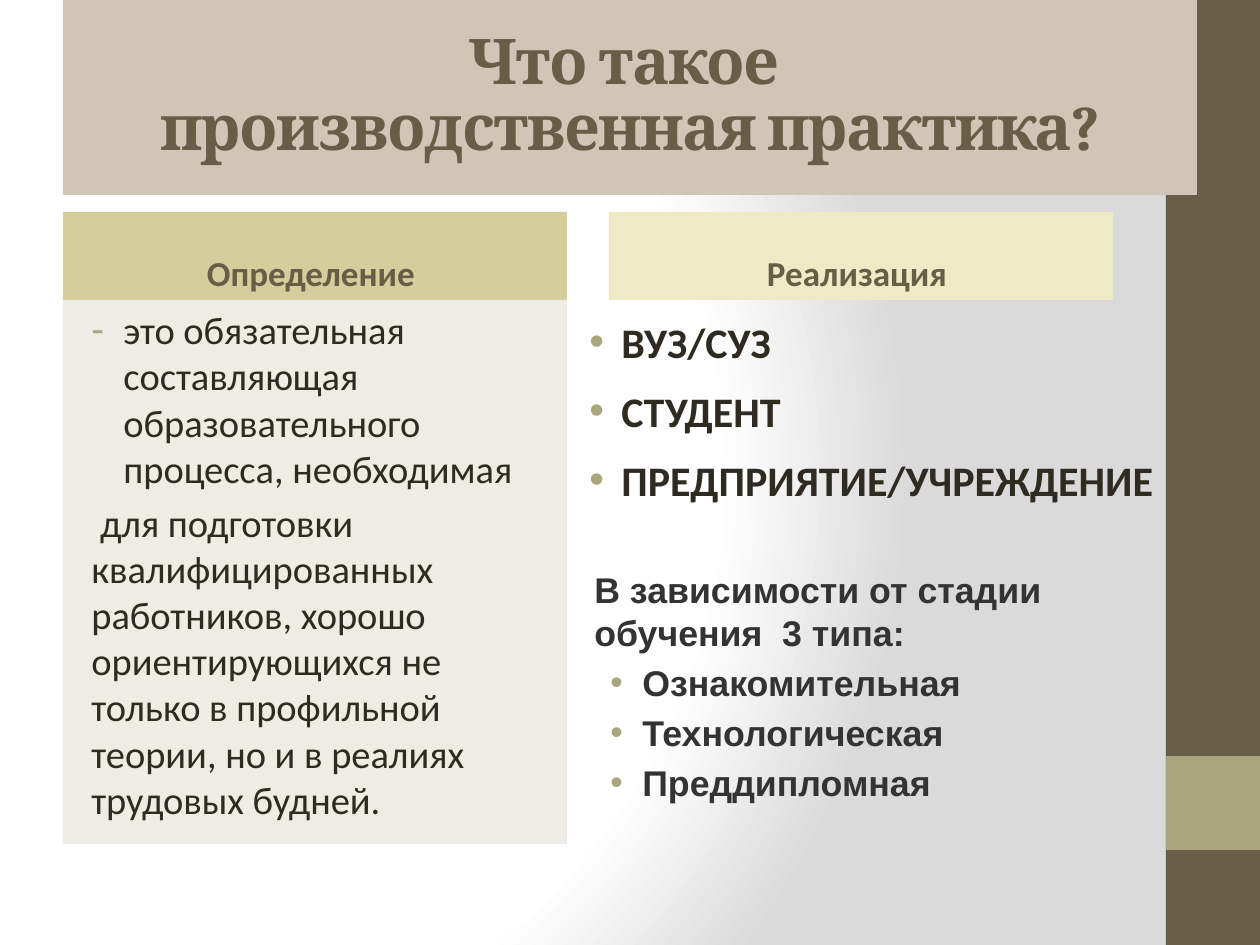
from pptx import Presentation
from pptx.dml.color import RGBColor
from pptx.enum.shapes import MSO_SHAPE as SHAPE
from pptx.enum.text import MSO_ANCHOR as ANCHOR, PP_ALIGN as ALIGN
from pptx.oxml import parse_xml
from pptx.oxml.ns import nsdecls
from pptx.util import Emu, Pt

PX = 914400 // 126
BROWN, OLIVE, INK, GREY = "675E47", "A9A57C", "2F2B20", "333333"
INDENT, HANGING = 48, 32

BACKGROUND_STOPS = [(0, "FFFFFF"), (75, "FFFFFF"), (100, "DADADA")]
SIDEBAR = [((1166, 0, 94, 945), BROWN), ((1166, 756, 94, 94), OLIVE)]

TITLE = dict(font="Cambria", size=36, color=BROWN, bold=True,
             align=ALIGN.CENTER, line=0.87, before=0, tracking=-100)
HEADING = dict(font="Calibri", size=20, color=BROWN, bold=True, align=ALIGN.CENTER)
DEFINITION = dict(font="Calibri", size=22, color=INK)
PARTIES = dict(font="Calibri", size=24, color=INK, bold=True, line=1.2)
TYPES = dict(font="Arial", size=20.4, color=GREY, bold=True)

PANELS = [
    ((63, 0, 1134, 195), "D0C6B8", ANCHOR.MIDDLE, TITLE, [
        ("", 0, "Что такое "),
        ("", 0, "производственная практика?"),
    ]),
    ((63, 212, 504, 88), "D3CE9B", ANCHOR.BOTTOM, HEADING, [("", 0, "Определение ")]),
    ((63, 300, 504, 544), "EEEDE5", ANCHOR.TOP, DEFINITION, [
        ("-", INDENT, "это обязательная составляющая образовательного процесса, необходимая"),
        ("", 16, " для подготовки квалифицированных работников, хорошо ориентирующихся "
                 "не только в профильной теории, но и в реалиях трудовых будней."),
    ]),
    ((609, 212, 504, 88), "EDEAC4", ANCHOR.BOTTOM, HEADING, [("", 0, "Реализация ")]),
    ((561, 300, 605, 223), None, ANCHOR.TOP, PARTIES, [
        ("•", INDENT, "ВУЗ/СУЗ"),
        ("•", INDENT, "СТУДЕНТ"),
        ("•", INDENT, "ПРЕДПРИЯТИЕ/УЧРЕЖДЕНИЕ"),
    ]),
    ((582, 562, 605, 223), None, ANCHOR.TOP, TYPES, [
        ("", 0, "В зависимости от стадии обучения  3 типа:"),
        ("•", INDENT, "Ознакомительная"),
        ("•", INDENT, "Технологическая"),
        ("•", INDENT, "Преддипломная"),
    ]),
]


def rgb(color):
    return RGBColor.from_string(color)


def px(length):
    return Emu(length * PX)


def paint_background(slide):
    stops = "".join(f'<a:gs pos="{pos * 1000}"><a:srgbClr val="{color}"/></a:gs>'
                    for pos, color in BACKGROUND_STOPS)
    slide.element.cSld.insert(0, parse_xml(
        f'<p:bg {nsdecls("p", "a")}><p:bgPr><a:gradFill rotWithShape="1">'
        f'<a:gsLst>{stops}</a:gsLst><a:path path="circle">'
        '<a:fillToRect l="20000" t="50000" r="100000" b="50000"/></a:path>'
        '</a:gradFill><a:effectLst/></p:bgPr></p:bg>'))


def add_panel(slide, box, fill):
    place = [px(length) for length in box]
    if fill is None:
        return slide.shapes.add_textbox(*place)
    panel = slide.shapes.add_shape(SHAPE.RECTANGLE, *place)
    panel.shadow.inherit = False
    panel.fill.solid()
    panel.fill.fore_color.rgb = rgb(fill)
    panel.line.fill.background()
    return panel


def set_bullet(paragraph, bullet, margin):
    props = paragraph._p.get_or_add_pPr()
    props.set("marL", str(px(margin)))
    props.set("indent", str(px(-HANGING if bullet else 0)))
    if bullet:
        props.append(parse_xml(f'<a:buClr {nsdecls("a")}><a:srgbClr val="{OLIVE}"/></a:buClr>'))
        props.append(parse_xml(f'<a:buFont {nsdecls("a")} typeface="Arial"/>'))
        props.append(parse_xml(f'<a:buChar {nsdecls("a")} char="{bullet}"/>'))


def write(panel, anchor, style, lines):
    frame = panel.text_frame
    frame.word_wrap = True
    frame.vertical_anchor = anchor
    frame.text = "\n".join(text for _, _, text in lines)
    for paragraph, (bullet, margin, _) in zip(frame.paragraphs, lines):
        paragraph.alignment = style.get("align", ALIGN.LEFT)
        paragraph.line_spacing = style.get("line", 1.0)
        paragraph.space_before = Pt(style.get("before", round(style["size"] * 0.2, 1)))
        set_bullet(paragraph, bullet, margin)
        for run in paragraph.runs:
            run.font.name = style["font"]
            run.font.size = Pt(style["size"])
            run.font.bold = style.get("bold", False)
            run.font.color.rgb = rgb(style["color"])
            if "tracking" in style:
                run.font._element.set("spc", str(style["tracking"]))


def main():
    deck = Presentation()
    deck.slide_width, deck.slide_height = px(1260), px(945)
    slide = deck.slides.add_slide(deck.slide_layouts[6])
    paint_background(slide)
    for box, fill in SIDEBAR:
        add_panel(slide, box, fill)
    for box, fill, anchor, style, lines in PANELS:
        write(add_panel(slide, box, fill), anchor, style, lines)
    deck.save("out.pptx")


if __name__ == "__main__":
    main()
